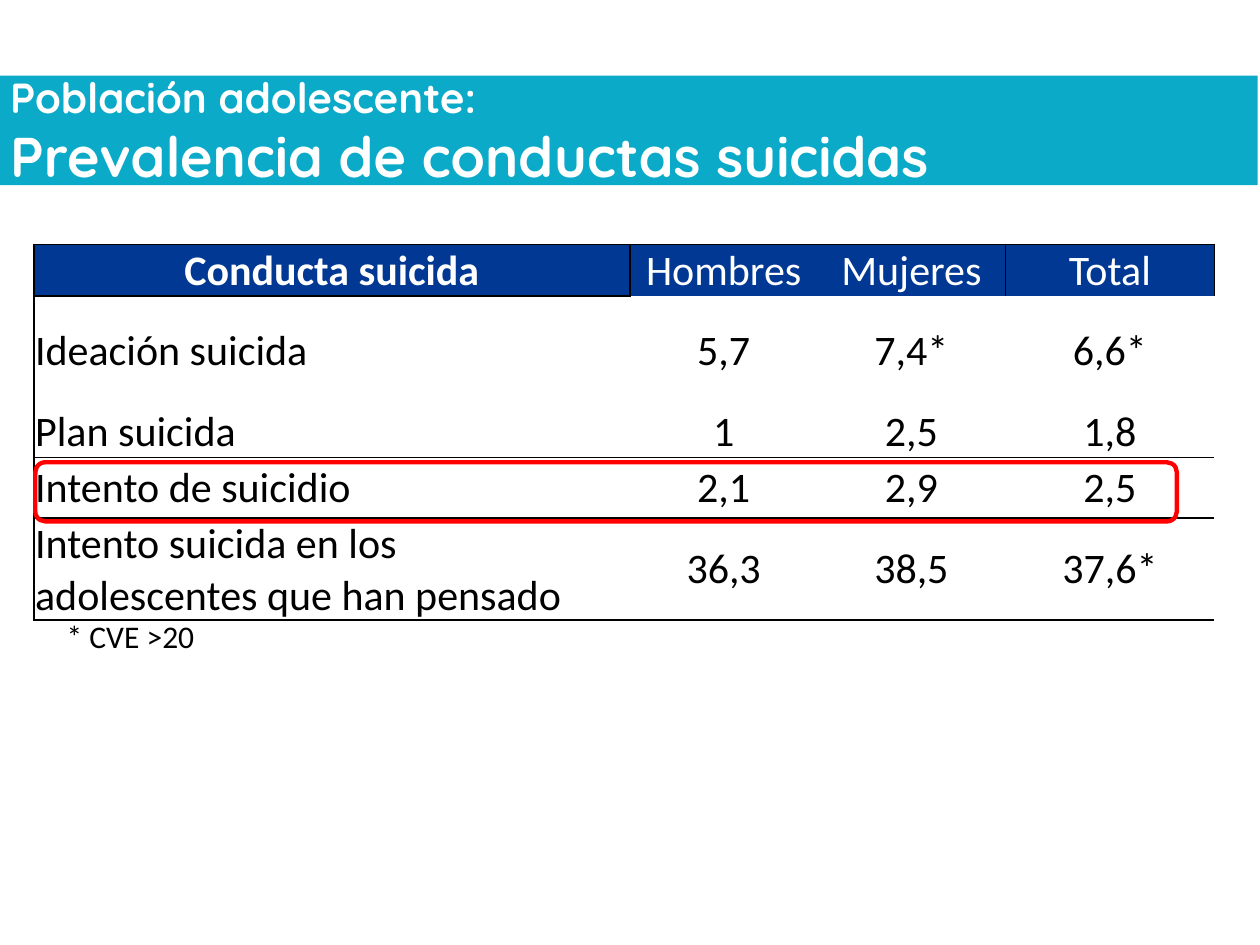
from lxml import etree
from pptx import Presentation
from pptx.dml.color import RGBColor
from pptx.enum.shapes import MSO_SHAPE
from pptx.enum.text import MSO_ANCHOR, PP_ALIGN
from pptx.oxml.ns import qn
from pptx.util import Pt

MIDDLE, TOP = MSO_ANCHOR.MIDDLE, MSO_ANCHOR.TOP
LEFT, CENTER = PP_ALIGN.LEFT, PP_ALIGN.CENTER
ROUND = MSO_SHAPE.ROUNDED_RECTANGLE

TITLE = [("Población adolescente:", 24), ("Prevalencia de conductas suicidas", 32)]
ROWS = [
    ("Conducta suicida", "Hombres", "Mujeres", "Total"),
    ("Ideación suicida", "5,7", "7,4*", "6,6*"),
    ("Plan suicida", "1", "2,5", "1,8"),
    ("Intento de suicidio", "2,1", "2,9", "2,5"),
    ("Intento suicida en los adolescentes que han pensado", "36,3", "38,5", "37,6*"),
]
NOTE = "* CVE >20"
WIDTHS = [340.5, 107.3, 107.3, 119.5]
HEIGHTS = [25.2, 62.6, 25.2, 34.6, 50.4]
# Sides with a line, by row and column: L left, R right, T top, B bottom
EDGES = [
    ("LRTB", "LT", "TR", "LTR"),
    ("LT", "", "", ""),
    ("LB", "B", "B", "B"),
    ("LTB", "TB", "TB", "TB"),
    ("LTB", "TB", "TB", "TB"),
]
BLACK, WHITE, BLUE, TEAL, RED = "000000", "FFFFFF", "003893", "0AAAC8", "FF0000"


def color(code):
    return RGBColor.from_string(code)


def paint(fill, code):
    fill.solid()
    fill.fore_color.rgb = color(code)


def style(font, size, code, name="Calibri", bold=False):
    look = {"size": Pt(size), "name": name, "bold": bold}
    for key, value in look.items():
        setattr(font, key, value)
    font.color.rgb = color(code)


def place(shape, *box):
    for key, value in zip(("left", "top", "width", "height"), box):
        setattr(shape, key, Pt(value))


def border(cell, sides):
    """Draw the given sides in black and leave the others clear."""
    props = cell._tc.get_or_add_tcPr()
    for i, side in enumerate("LRTB"):
        line = etree.Element(qn(f"a:ln{side}"), w=str(Pt(1)))
        if side in sides:
            fill = etree.SubElement(line, qn("a:solidFill"))
            etree.SubElement(fill, qn("a:srgbClr"), val=BLACK)
        else:
            etree.SubElement(line, qn("a:noFill"))
        props.insert(i, line)


def add_title(slide):
    title = slide.shapes.title
    place(title, -1.4, 43.2, 720, 62.6)
    paint(title.fill, TEAL)
    frame = title.text_frame
    frame.vertical_anchor = MIDDLE
    frame.word_wrap = True
    para = frame.paragraphs[0]
    para.alignment = LEFT
    for i, (text, size) in enumerate(TITLE):
        if i:
            para.add_line_break()
        run = para.add_run()
        run.text = text
        style(run.font, size, WHITE, "Quicksand", True)


def add_grid(slide):
    shape = slide.shapes.add_table(
        len(ROWS), len(WIDTHS), Pt(19.4), Pt(139.7), Pt(sum(WIDTHS)), Pt(sum(HEIGHTS)))
    table = shape.table
    table.horz_banding = False
    for col, width in zip(table.columns, WIDTHS):
        col.width = Pt(width)
    for r, texts in enumerate(ROWS):
        table.rows[r].height = Pt(HEIGHTS[r])
        for c, text in enumerate(texts):
            cell = table.cell(r, c)
            look = {"margin_left": Pt(0.7), "margin_right": Pt(0.7),
                    "margin_top": Pt(0.7), "margin_bottom": Pt(0),
                    "vertical_anchor": MIDDLE, "text": text}
            for key, value in look.items():
                setattr(cell, key, value)
            head = r == 0
            if head:
                paint(cell.fill, BLUE)
            else:
                cell.fill.background()
            border(cell, EDGES[r][c])
            para = cell.text_frame.paragraphs[0]
            para.alignment = CENTER if head or c else LEFT
            style(para.runs[0].font, 24, WHITE if head else BLACK, bold=head and c == 0)


def add_note(slide):
    box = slide.shapes.add_textbox(Pt(31), Pt(349.2), Pt(102.2), Pt(28.8))
    frame = box.text_frame
    frame.word_wrap = True
    frame.vertical_anchor = TOP
    run = frame.paragraphs[0].add_run()
    run.text = NOTE
    style(run.font, 18, BLACK)


def add_frame(slide):
    mark = slide.shapes.add_shape(ROUND, Pt(20.2), Pt(264.2), Pt(652.3), Pt(33.8))
    mark.shadow.inherit = False
    mark.fill.background()
    mark.line.color.rgb = color(RED)
    mark.line.width = Pt(2.5)


def main():
    deck = Presentation()
    deck.slide_width, deck.slide_height = Pt(720), Pt(540)
    slide = deck.slides.add_slide(deck.slide_layouts[5])
    for draw in (add_note, add_title, add_grid, add_frame):
        draw(slide)
    deck.save("out.pptx")


if __name__ == "__main__":
    main()
